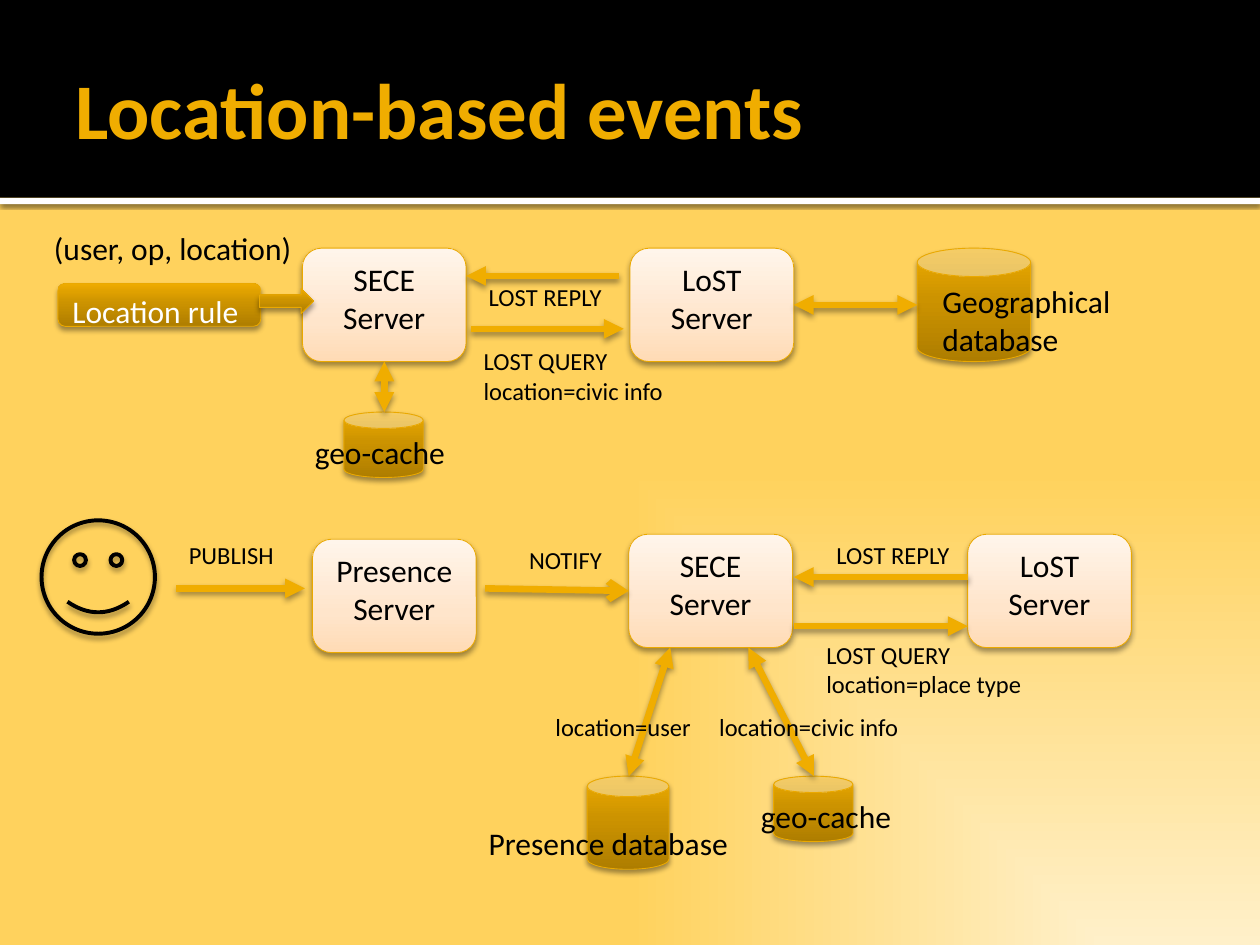
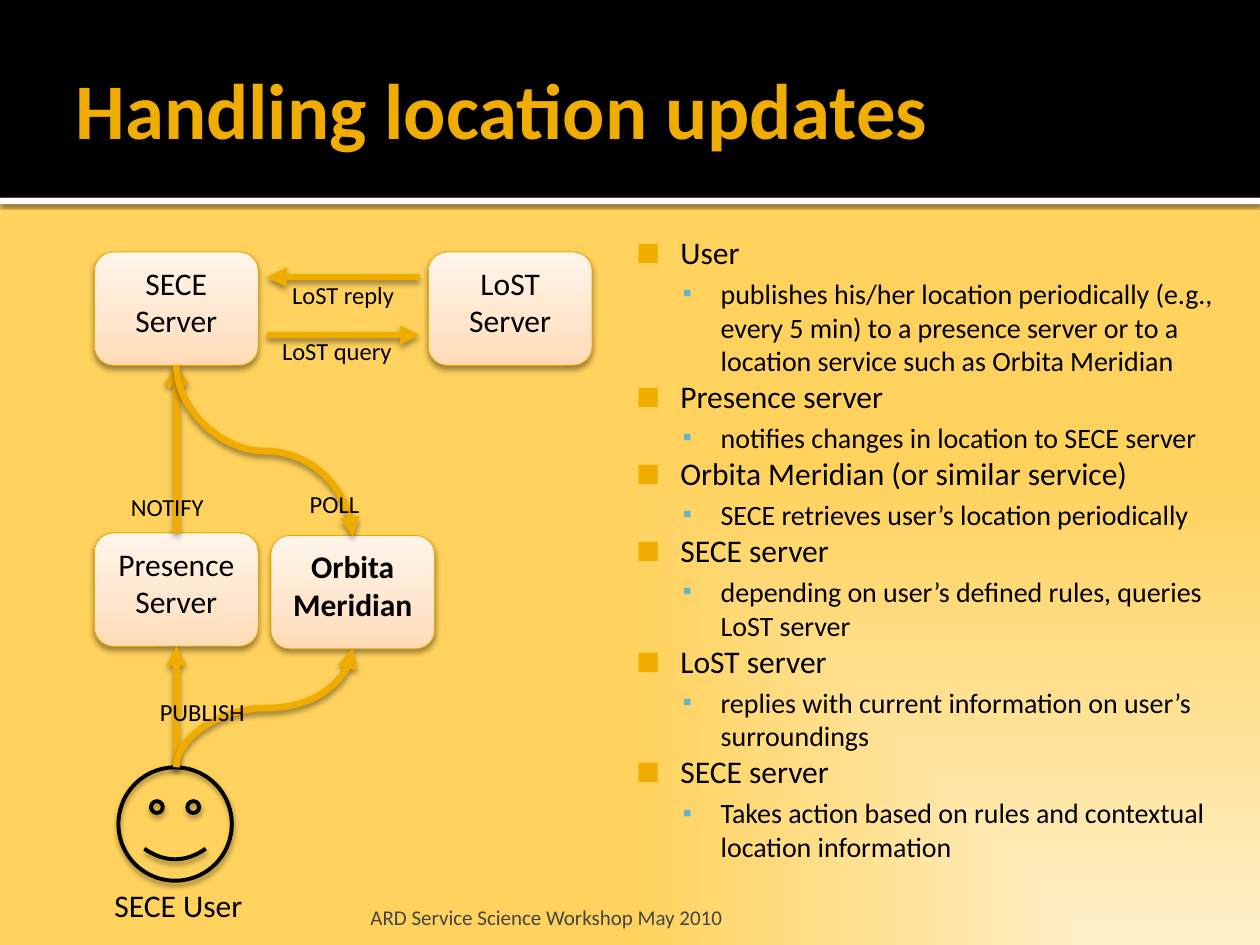
from pptx import Presentation
from pptx.dml.color import RGBColor
from pptx.enum.shapes import MSO_CONNECTOR, MSO_SHAPE
from pptx.enum.text import MSO_ANCHOR, MSO_AUTO_SIZE, PP_ALIGN
from pptx.oxml import parse_xml
from pptx.oxml.ns import nsdecls, qn
from pptx.util import Inches, Pt

RECT, ROUND = MSO_SHAPE.RECTANGLE, MSO_SHAPE.ROUNDED_RECTANGLE
CAN, ARROW, SMILEY = MSO_SHAPE.CAN, MSO_SHAPE.RIGHT_ARROW, MSO_SHAPE.SMILEY_FACE
STRAIGHT, CURVE = MSO_CONNECTOR.STRAIGHT, MSO_CONNECTOR.CURVE
TOP, MIDDLE, BOTTOM = MSO_ANCHOR.TOP, MSO_ANCHOR.MIDDLE, MSO_ANCHOR.BOTTOM
LEFT, CENTER = PP_ALIGN.LEFT, PP_ALIGN.CENTER
FIT, FIXED = MSO_AUTO_SIZE.SHAPE_TO_FIT_TEXT, MSO_AUTO_SIZE.NONE

HUES = {"black": "000000", "white": "FFFFFF", "amber": "F0AD00",
        "edge": "EBA900", "blue": "60B5CC", "grey": "454545"}
FONT = "Calibri"
NS = nsdecls("a")
UP = '<a:lin ang="16200000" scaled="0"/>'
CORNER = ('<a:path path="rect"><a:fillToRect l="100000" t="100000"/>'
          '</a:path>')
BLENDS = {
    "page": ([(0, "FFF0C9"), (100, "FFD25D")], CORNER),
    "cream": ([(0, "FFDBB5"), (35, "FFE5CB"), (100, "FFF5EB")], UP),
    "gold": ([(0, "AE7D00"), (55, "CC9300"), (100, "EEAB00")], UP),
}
GRADS = {}
for name, (stops, way) in BLENDS.items():
    marks = "".join(f'<a:gs pos="{pos * 1000}"><a:srgbClr val="{hue}"/></a:gs>'
                    for pos, hue in stops)
    GRADS[name] = (f'<a:gradFill {NS} rotWithShape="1"><a:gsLst>{marks}'
                   f'</a:gsLst>{way}</a:gradFill>')

# Shadows: opacity in percent, blur and distance in points
SHADES = {"band": (60, 2.5, 0.8), "soft": (38, 3.5, 2), "firm": (38, 3.1, 2)}


def dress(shape, fill=None, edge=None, width=0.5, shade=None):
    """Give a shape or connector its fill, line and shadow."""
    props = shape.element.spPr
    if fill in GRADS:
        shape.fill.background()
        props.replace(props.find(qn("a:noFill")), parse_xml(GRADS[fill]))
    elif fill:
        shape.fill.solid()
        shape.fill.fore_color.rgb = RGBColor.from_string(HUES[fill])
    elif hasattr(shape, "fill"):
        shape.fill.background()
    if edge:
        shape.line.color.rgb = RGBColor.from_string(HUES[edge])
        shape.line.width = Pt(width)
    else:
        shape.line.fill.background()
    glow = ""
    if shade:
        alpha, blur, gap = SHADES[shade]
        glow = (f'<a:outerShdw blurRad="{Pt(blur)}" dist="{Pt(gap)}" '
                f'dir="5400000" rotWithShape="0"><a:srgbClr val="000000">'
                f'<a:alpha val="{alpha * 1000}"/></a:srgbClr></a:outerShdw>')
    props.append(parse_xml(f"<a:effectLst {NS}>{glow}</a:effectLst>"))


def write(frame, text, size=18, hue="black", bold=False, align=LEFT, **form):
    """Fill a text frame, one paragraph a line."""
    for key, val in form.items():
        setattr(frame, key, val)
    for num, line in enumerate(text.split("\n")):
        para = frame.add_paragraph() if num else frame.paragraphs[0]
        para.alignment = align
        run = para.add_run()
        run.text = line
        for key, val in {"name": FONT, "size": Pt(size), "bold": bold}.items():
            setattr(run.font, key, val)
        run.font.color.rgb = RGBColor.from_string(HUES[hue])


deck = Presentation()
deck.slide_width, deck.slide_height = Inches(10), Inches(7.5)
events = deck.slides.add_slide(deck.slide_layouts[5])
updates = deck.slides.add_slide(deck.slide_layouts[1])

# Master: page blend and title bands
master = deck.slide_master
master.background.fill.background()
page = master.element.cSld.find(qn("p:bg")).find(qn("p:bgPr"))
page.replace(page.find(qn("a:noFill")), parse_xml(GRADS["page"]))
for spot, (top, high, fill, shade) in enumerate(
        [(1.57, 0.05, "white", "band"), (0, 1.57, "black", None)], 2):
    band = events.shapes.add_shape(RECT, 0, Inches(top), Inches(10), Inches(high))
    dress(band, fill, shade=shade)
    master.shapes.element.insert(spot, band.element)

# Titles
for slide, text in [(events, "Location-based events"),
                    (updates, "Handling location updates")]:
    title = slide.shapes.title
    title.left, title.top, title.width, title.height = map(
        Inches, (0.5, 0.17, 9, 1.37))
    write(title.text_frame, text, 45, "amber", True, vertical_anchor=MIDDLE,
          auto_size=FIXED, margin_left=Inches(0.1), margin_right=Inches(0.05))

# Server boxes: left, top, text, bold
SECE, LOST, PRES = "SECE\nServer", "LoST\nServer", "Presence\nServer"
BOXES = [
    (events, [
        (4.99, 4.24, SECE, False), (7.68, 4.24, LOST, False),
        (2.48, 4.28, PRES, False), (2.4, 1.97, SECE, False),
        (5, 1.97, LOST, False)]),
    (updates, [
        (0.75, 2, SECE, False), (3.4, 2, LOST, False),
        (0.75, 4.23, PRES, False), (2.15, 4.25, "Orbita\nMeridian", True)]),
]
for slide, rows in BOXES:
    for left, top, text, bold in rows:
        box = slide.shapes.add_shape(ROUND, Inches(left), Inches(top),
                                     Inches(1.3), Inches(0.9))
        dress(box, "cream", "edge", shade="soft")
        write(box.text_frame, text, bold=bold, align=CENTER, vertical_anchor=TOP)

# Databases, rule tag and block arrow
for kind, left, top, wide, high in [
        (CAN, 7.28, 1.97, 0.9, 0.9), (CAN, 2.73, 3.27, 0.63, 0.52),
        (CAN, 6.14, 6.16, 0.63, 0.52), (CAN, 4.66, 6.16, 0.65, 0.74),
        (ROUND, 0.46, 2.25, 1.61, 0.34), (ARROW, 2.06, 2.29, 0.43, 0.2)]:
    part = events.shapes.add_shape(kind, *map(Inches, (left, top, wide, high)))
    dress(part, "gold", "edge", shade="firm")
    if kind == ROUND:
        write(part.text_frame, "Location rule", hue="white", vertical_anchor=TOP)

# Users
for slide, left, top in [(events, 0.33, 4.13), (updates, 0.94, 6.09)]:
    face = slide.shapes.add_shape(SMILEY, Inches(left), Inches(top),
                                  Inches(0.9), Inches(0.9))
    dress(face, None, "black", 2.25, "firm")

# Links: from, to, head, tail, turn; a turned link is a curve
TRI, OPEN = "triangle", "arrow"
LINKS = [
    (events, [
        (7.68, 4.58, 6.3, 4.58, None, TRI, 0), (6.3, 4.97, 7.68, 4.97, None, TRI, 0),
        (3.85, 4.67, 4.99, 4.69, None, OPEN, 0), (1.4, 4.67, 2.42, 4.67, None, TRI, 0),
        (6.3, 2.42, 7.28, 2.42, TRI, TRI, 0), (4.91, 2.19, 3.7, 2.19, None, TRI, 0),
        (3.74, 2.61, 4.95, 2.61, None, TRI, 0), (3.05, 2.87, 3.05, 3.27, TRI, TRI, 0),
        (5.94, 5.14, 6.46, 6.16, TRI, TRI, 0), (5.32, 5.14, 4.99, 6.16, TRI, TRI, 0)]),
    (updates, [
        (1.4, 6.09, 1.4, 5.13, None, TRI, 0), (3.33, 2.2, 2.12, 2.2, None, TRI, 0),
        (2.12, 2.66, 3.33, 2.66, None, TRI, 0), (1.4, 4.23, 1.4, 2.9, None, OPEN, 0),
        (2.57, 6.32, 1.63, 4.92, None, TRI, 90),
        (2.78, 2.88, 1.42, 4.28, None, TRI, 270)]),
]
for slide, rows in LINKS:
    for *ends, head, tail, turn in rows:
        link = slide.shapes.add_connector(CURVE if turn else STRAIGHT,
                                          *map(Inches, ends))
        dress(link, None, "amber", 3.78, "soft")
        props = link.element.spPr
        if turn:
            props.find(qn("a:xfrm")).set("rot", str(turn * 60000))
        for tag, tip in [("headEnd", head), ("tailEnd", tail)]:
            if tip:
                props.find(qn("a:ln")).append(
                    parse_xml(f'<a:{tag} {NS} type="{tip}"/>'))

# Labels: left, top, width, size, text
LABELS = [
    (events, [
        (1.4, 4.24, 0.88, 14, "PUBLISH"), (6.54, 4.24, 1.11, 14, "LOST REPLY"),
        (6.46, 5.03, 1.79, 14, "LOST QUERY\nlocation=place type"),
        (4.1, 4.28, 0.79, 14, "NOTIFY"), (7.38, 2.19, 1.59, 18, "Geographical\ndatabase"),
        (3.78, 2.19, 1.11, 14, "LOST REPLY"),
        (3.74, 2.7, 1.67, 14, "LOST QUERY\nlocation=civic info"),
        (0.33, 1.77, 2.12, 18, "(user, op, location)"),
        (2.4, 3.39, 1.29, 18, "geo-cache"), (5.94, 6.28, 1.29, 18, "geo-cache"),
        (3.78, 6.49, 2.16, 18, "Presence database"),
        (5.61, 5.6, 1.67, 14, "location=civic info"),
        (4.31, 5.6, 1.31, 14, "location=user")]),
    (updates, [
        (2.22, 2.17, 1.07, 14, "LoST reply"), (2.14, 2.62, 1.13, 14, "LoST query"),
        (0.94, 3.86, 0.79, 14, "NOTIFY"), (0.81, 6.98, 1.29, 18, "SECE User"),
        (1.17, 5.48, 0.88, 14, "PUBLISH"), (2.36, 3.83, 0.66, 14, "POLL")]),
]
HIGH = {(14, 1): 0.34, (14, 2): 0.57, (18, 1): 0.4, (18, 2): 0.71}
for slide, rows in LABELS:
    for left, top, wide, size, text in rows:
        high = HIGH[size, text.count("\n") + 1]
        label = slide.shapes.add_textbox(*map(Inches, (left, top, wide, high)))
        write(label.text_frame, text, size, word_wrap=False, auto_size=FIT)

# Steps list
STEPS = [
    ("User", "publishes his/her location periodically (e.g., every 5 min) to a "
             "presence server or to a location service such as Orbita Meridian"),
    ("Presence server", "notifies changes in location to SECE server"),
    ("Orbita Meridian (or similar service)",
     "SECE retrieves user’s location periodically"),
    ("SECE server", "depending on user’s defined rules, queries LoST server"),
    ("LoST server", "replies with current information on user’s surroundings"),
    ("SECE server",
     "Takes action based on rules and contextual location information"),
]
# Per level: size, indent, hang, bullet, bullet colour, bullet percent
LEVELS = [(18, 0.48, 0.35, "■", "amber", 80), (16, 0.8, 0.3, "▪", "blue", 90)]
body = updates.placeholders[1]
body.left, body.top, body.width, body.height = map(Inches, (4.86, 1.75, 5.14, 5.22))
frame = body.text_frame
write(frame, "\n".join(line for pair in STEPS for line in pair),
      auto_size=FIXED, vertical_anchor=TOP, margin_left=Inches(0.06),
      margin_top=Inches(0.1), margin_right=Inches(0.1), margin_bottom=Inches(0.05))
for num, para in enumerate(frame.paragraphs):
    para.level = num % 2
    size, dent, hang, sign, hue, share = LEVELS[para.level]
    para.runs[0].font.size = Pt(size)
    if not para.level:
        para.space_before = Pt(0)
    props = para._p.get_or_add_pPr()
    props.set("marL", str(Inches(dent)))
    props.set("indent", str(-Inches(hang)))
    for bit in (f'<a:buClr {NS}><a:srgbClr val="{HUES[hue]}"/></a:buClr>',
                f'<a:buSzPct {NS} val="{share * 1000}"/>',
                f'<a:buFont {NS} typeface="{FONT}"/>',
                f'<a:buChar {NS} char="{sign}"/>'):
        props.append(parse_xml(bit))

# Footer
foot = updates.shapes.add_textbox(*map(Inches, (2.89, 7.08, 6.02, 0.3)))
write(foot.text_frame, "ARD Service Science Workshop May 2010", 12, "grey",
      word_wrap=True, vertical_anchor=BOTTOM, margin_left=Inches(0.05),
      margin_right=Inches(0.05), margin_bottom=0)

deck.save("out.pptx")
